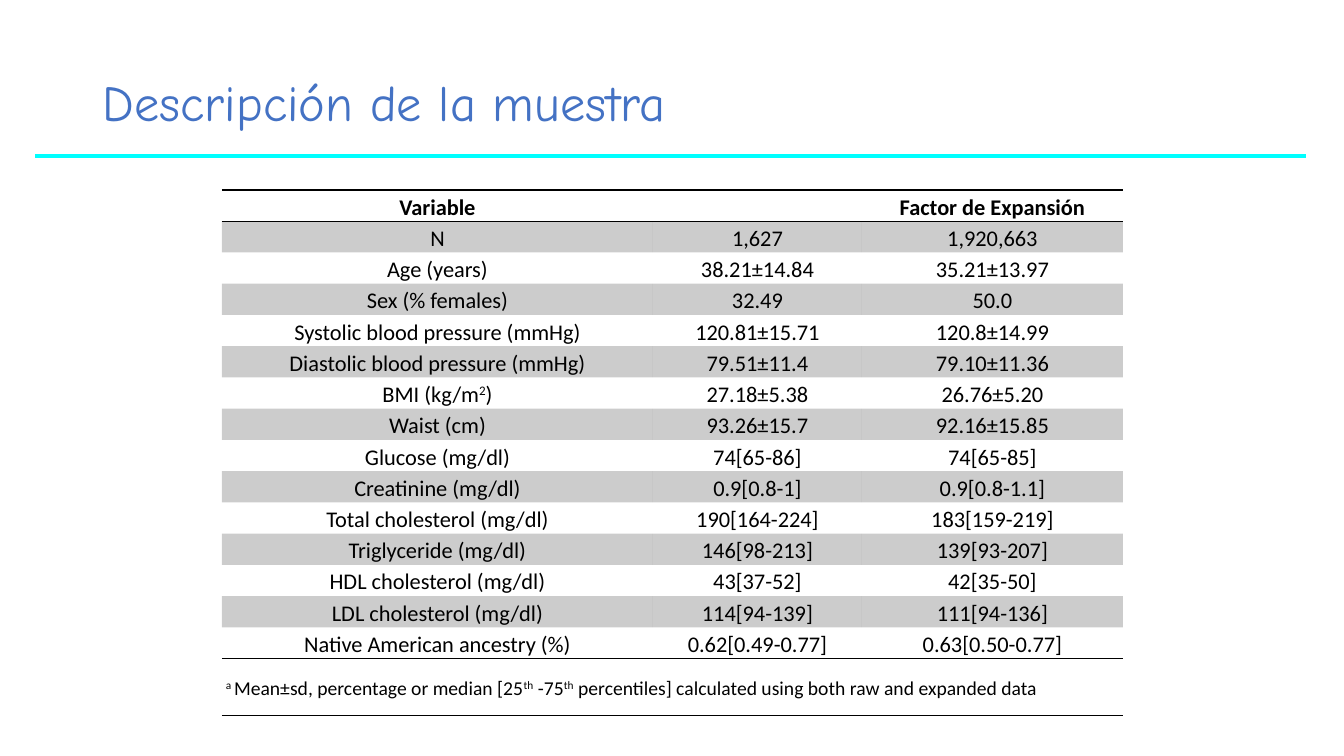
from dataclasses import dataclass

from lxml import etree
from pptx import Presentation
from pptx.dml.color import RGBColor
from pptx.enum.shapes import MSO_CONNECTOR
from pptx.enum.text import MSO_ANCHOR, PP_ALIGN
from pptx.oxml.ns import qn
from pptx.util import Pt

LEFT, CENTER, JUSTIFY = PP_ALIGN.LEFT, PP_ALIGN.CENTER, PP_ALIGN.JUSTIFY
TOP, MIDDLE = MSO_ANCHOR.TOP, MSO_ANCHOR.MIDDLE
STRAIGHT = MSO_CONNECTOR.STRAIGHT
PLAIN_TABLE_STYLE = "{2D5ABB26-0587-4C30-8999-92F81FD0307C}"
EMU_PER_PX = 914400 / 100.8


@dataclass(frozen=True)
class Theme:
    title_color: str = "4472C4"
    rule_color: str = "00FFFF"
    ink: str = "000000"
    band_opacity: int = 20
    title_font: str = "Comic Neue"
    table_font: str = "Calibri"
    title_size: int = 36
    table_size: int = 16
    note_size: int = 14


theme = Theme()


def px(length):
    return round(length * EMU_PER_PX)


def write_text(frame, text, *, size, font=theme.table_font, color=theme.ink,
               bold=False, align=CENTER, spacing=1.14):
    """Write one paragraph; text between ^ marks is superscript."""
    paragraph = frame.paragraphs[0]
    paragraph.alignment = align
    paragraph.line_spacing = spacing
    for index, part in enumerate(text.split("^")):
        if not part:
            continue
        run = paragraph.add_run()
        run.text = part
        run.font.name = font
        run.font.size = Pt(size)
        run.font.bold = bold
        run.font.color.rgb = RGBColor.from_string(color)
        if index % 2:
            run.font._element.set("baseline", "30000")
    if not text:
        etree.SubElement(paragraph._p, qn("a:endParaRPr"), sz=str(size * 100))


presentation = Presentation()
presentation.slide_width = px(1344)
presentation.slide_height = px(756)
slide = presentation.slides.add_slide(presentation.slide_layouts[6])

# Table content
rows = [
    ("Variable", "", "Factor de Expansión"),
    ("N", "1,627", "1,920,663"),
    ("Age (years)", "38.21±14.84", "35.21±13.97"),
    ("Sex (% females)", "32.49", "50.0"),
    ("Systolic blood pressure (mmHg)", "120.81±15.71", "120.8±14.99"),
    ("Diastolic blood pressure (mmHg)", "79.51±11.4", "79.10±11.36"),
    ("BMI (kg/m^2^)", "27.18±5.38", "26.76±5.20"),
    ("Waist (cm)", "93.26±15.7", "92.16±15.85"),
    ("Glucose (mg/dl)", "74[65-86]", "74[65-85]"),
    ("Creatinine (mg/dl)", "0.9[0.8-1]", "0.9[0.8-1.1]"),
    ("Total cholesterol (mg/dl)", "190[164-224]", "183[159-219]"),
    ("Triglyceride (mg/dl)", "146[98-213]", "139[93-207]"),
    ("HDL cholesterol (mg/dl)", "43[37-52]", "42[35-50]"),
    ("LDL cholesterol (mg/dl)", "114[94-139]", "111[94-136]"),
    ("Native American ancestry (%)", "0.62[0.49-0.77]", "0.63[0.50-0.77]"),
    ("^a ^Mean±sd, percentage or median [25^th^ -75^th^ percentiles] "
     "calculated using both raw and expanded data", "", ""),
]
column_widths = [431, 209, 261]
row_height, note_height = 31, 57
note_row = len(rows) - 1
borders = {0: ("lnT", "lnB"), note_row - 1: ("lnB",), note_row: ("lnT", "lnB")}

# Table frame
table_height = row_height * note_row + note_height
table_shape = slide.shapes.add_table(
    len(rows), len(column_widths), px(222), px(190),
    px(sum(column_widths)), px(table_height))
table = table_shape.table
table.first_row = False
table.horz_banding = False
table._tbl.tblPr.find(qn("a:tableStyleId")).text = PLAIN_TABLE_STYLE
for column, width in zip(table.columns, column_widths):
    column.width = px(width)
for row_index, row in enumerate(table.rows):
    row.height = px(note_height if row_index == note_row else row_height)
table.cell(note_row, 0).merge(table.cell(note_row, len(column_widths) - 1))

# Table cells
for row_index, row in enumerate(rows):
    is_note = row_index == note_row
    for column_index, text in enumerate(row):
        cell = table.cell(row_index, column_index)
        cell.margin_left = cell.margin_right = px(4)
        cell.margin_top = cell.margin_bottom = 0
        cell.vertical_anchor = MIDDLE if is_note else TOP
        write_text(cell.text_frame, text, bold=row_index == 0,
                   size=theme.note_size if is_note else theme.table_size,
                   align=JUSTIFY if is_note else CENTER)
        properties = cell._tc.get_or_add_tcPr()
        for side in borders.get(row_index, ()):
            border = etree.SubElement(properties, qn(f"a:{side}"), w=str(Pt(1)))
            border_fill = etree.SubElement(border, qn("a:solidFill"))
            etree.SubElement(border_fill, qn("a:srgbClr"), val=theme.ink)
        if row_index % 2 and not is_note:
            cell.fill.solid()
            cell.fill.fore_color.rgb = RGBColor.from_string(theme.ink)
            band_color = properties.find(f"{qn('a:solidFill')}/{qn('a:srgbClr')}")
            etree.SubElement(band_color, qn("a:alpha"),
                             val=str(theme.band_opacity * 1000))
        else:
            cell.fill.background()

# Title
title = slide.shapes.add_textbox(px(93), px(32), px(1159), px(146))
title.text_frame.word_wrap = True
title.text_frame.vertical_anchor = MIDDLE
write_text(title.text_frame, "Descripción de la muestra", size=theme.title_size,
           font=theme.title_font, color=theme.title_color, align=LEFT, spacing=0.9)

# Rule under the title
rule = slide.shapes.add_connector(STRAIGHT, px(37), px(156), px(1304), px(156))
rule.line.color.rgb = RGBColor.from_string(theme.rule_color)
rule.line.width = Pt(3)
rule.line._get_or_add_ln().set("cap", "sq")
etree.SubElement(rule._element.spPr, qn("a:effectLst"))

presentation.save("out.pptx")
